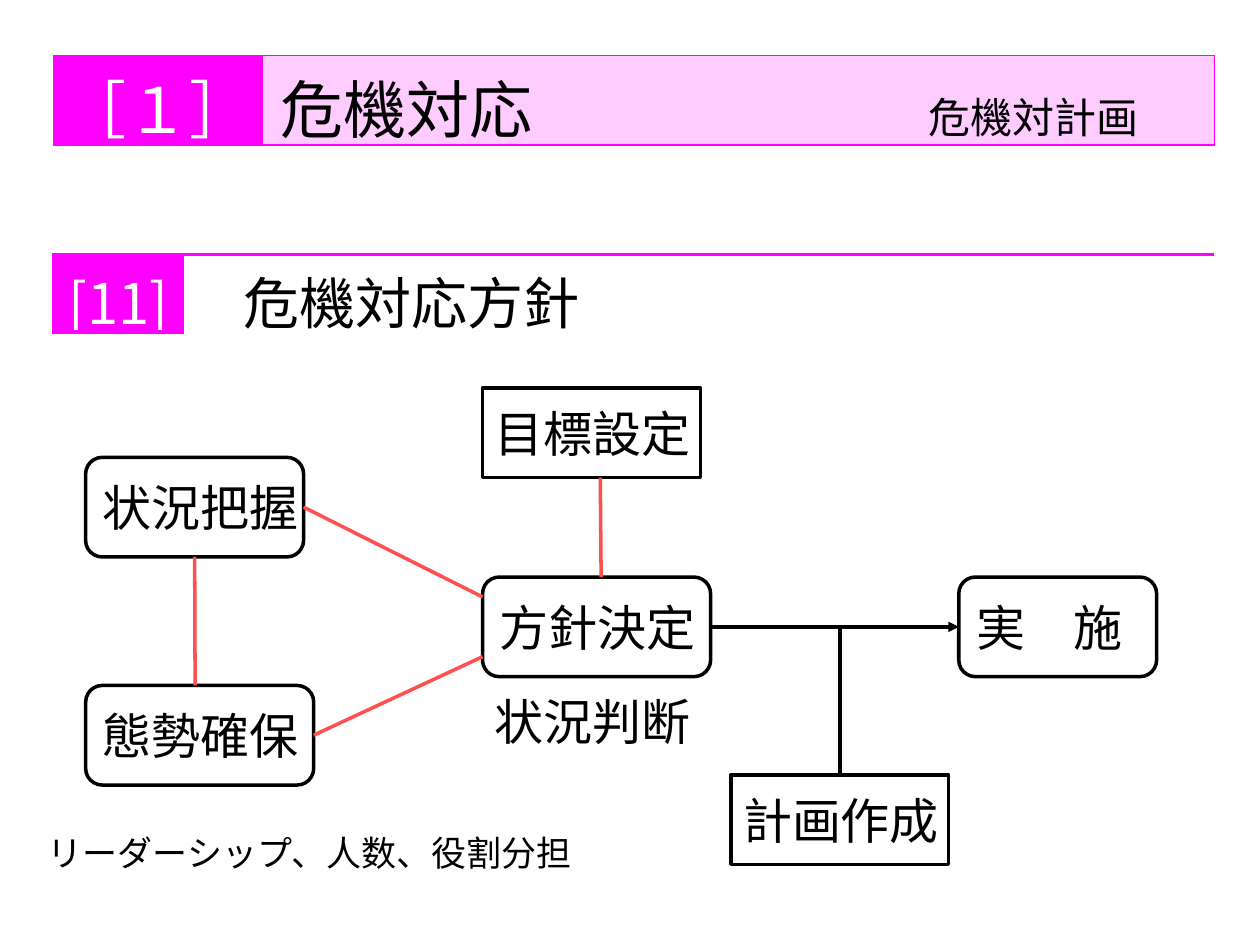
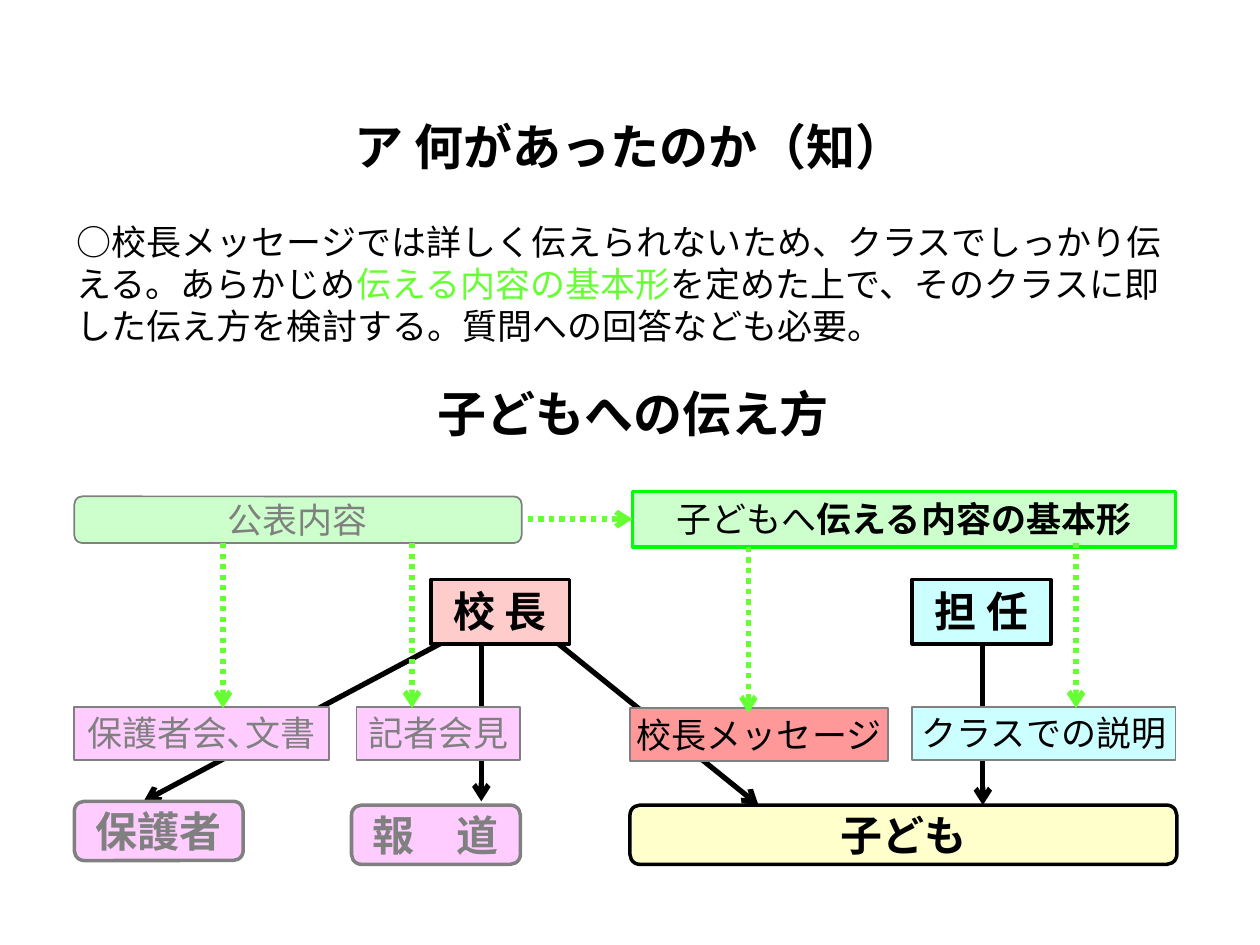
from lxml.etree import SubElement
from pptx import Presentation
from pptx.dml.color import RGBColor
from pptx.enum.dml import MSO_LINE
from pptx.enum.shapes import MSO_CONNECTOR, MSO_SHAPE
from pptx.enum.text import MSO_ANCHOR, PP_ALIGN
from pptx.oxml.ns import qn
from pptx.util import Inches, Pt

# Shared look; lengths are grid units, 100 columns by 75 rows per slide
COLUMNS, ROWS, UNIT = 100, 75, 0.1
LATIN, JAPANESE = "Arial", "Noto Sans CJK JP"
BLACK, WHITE, GRAY = "000000", "FFFFFF", "808080"
MAGENTA, PINK, RED = "FF00FF", "FFCCFF", "FF5050"
GREEN, PALE_GREEN, LIME = "66FF33", "CCFFCC", "00FF00"
PALE_BLUE, PALE_RED, SALMON, CREAM = "CCFFFF", "FFCCCC", "FF9999", "FFFFCC"
ROUND, SQUARE = MSO_SHAPE.ROUNDED_RECTANGLE, MSO_SHAPE.RECTANGLE
TIGHT = 0.4

# Slide 1: heading bands as (place, label width, border width, label, text, sizes)
SECTION_BAND = {
    "place": (4.3, 20.2, 92.1, 6.1), "label_width": 10.2, "border": 2.25,
    "label": "[11]", "size": 32, "indent": 4.8, "fill": WHITE,
    "spans": [("危機対応方針", {"size": 32})],
    "text_edges": {"R": (WHITE, 1), "B": (WHITE, 1)},
}
CHAPTER_BAND = {
    "place": (4.3, 4.4, 92.1, 7.1), "label_width": 16.5, "border": 1,
    "label": "［１］", "size": 36, "indent": 1.5, "fill": PINK, "tab": 51.4,
    "spans": [("危機対応", {"size": 36}), ("\t危機対計画", {"size": 24})],
    "text_edges": {},
}

# Slide 1: steps as name -> (outline, left, top, width, height)
STEPS = {
    "態勢確保": (ROUND, 6.8, 54.4, 18.1, 7.9),
    "状況把握": (ROUND, 6.8, 36.3, 17.3, 7.9),
    "方針決定": (ROUND, 38.3, 45.8, 18.1, 7.9),
    "実　施": (ROUND, 76.1, 45.8, 15.7, 7.9),
    "目標設定": (SQUARE, 38.3, 30.8, 17.3, 7.1),
    "計画作成": (SQUARE, 58, 61.5, 17.3, 7.1),
}
# Links join points given as shares of a step's width and height
STEP_LINKS = [
    ("状況把握", (0.5, 1), "態勢確保", (0.48, 0)),
    ("状況把握", (1, 0.5), "方針決定", (0, 0.2)),
    ("態勢確保", (1, 0.5), "方針決定", (0, 0.8)),
    ("目標設定", (0.54, 1), "方針決定", (0.52, 0)),
]
STEP_NOTES = [
    ("状況判断", (38.3, 54.4, 18.1, 5.7), 28),
    ("リーダーシップ、人数、役割分担", (2.8, 65.5, 45.7, 4.3), 20),
]

# Slide 2: text
HEADINGS = [
    ("ア 何があったのか（知）", (20.6, 8.4, 58.7, 6.3)),
    ("子どもへの伝え方", (20.9, 29.6, 58.7, 6.3)),
]
EXPLANATION = [
    ("○校長メッセージでは詳しく伝えられないため、クラスでしっかり伝える。あらかじめ", {}),
    ("伝える内容の基本形", {"color": GREEN}),
    ("を定めた上で、そのクラスに即した伝え方を検討する。質問への回答なども必要。", {}),
]
# Slide 2: groups share a format; members are (text, place, fill, colour)
SPEAKERS = [
    ("担 任", (72.4, 46, 11, 5.1), PALE_BLUE, BLACK),
    ("校 長", (34.2, 46, 11, 5.1), PALE_RED, BLACK),
]
AUDIENCES = [
    ("保護者", (5.9, 63.6, 13.4, 4.7), PINK, GRAY),
    ("報　道", (27.9, 63.9, 13.4, 4.7), PINK, GRAY),
    ("子ども", (50, 63.9, 43.4, 4.7), CREAM, BLACK),
]
CHANNELS = [
    ("クラスでの説明", (72.4, 56.1, 20.9, 4.2), PALE_BLUE, BLACK),
    ("校長メッセージ", (50, 56.2, 20.5, 4.2), SALMON, BLACK),
    ("保護者会､文書", (5.9, 56.1, 20.2, 4.2), PINK, GRAY),
    ("記者会見", (28.3, 56.1, 13, 4.2), PINK, GRAY),
]
PUBLIC_CONTENT = ("公表内容", (5.9, 39.4, 35.5, 3.7))
CHILD_CONTENT = [("子どもへ", {}), ("伝える内容の基本形", {"bold": True})]
CHILD_PLACE = (50.2, 39, 43.1, 4.4)
SPEECH_ARROWS = [
    ((78, 51.3), (78, 63.9)),
    ((44.2, 51), (60.2, 63.9)),
    ((35.1, 51), (11.4, 63.6)),
    ((38.2, 51), (38.2, 63.6)),
]
CONTENT_ARROWS = [
    ((17.7, 43.1), (17.7, 56.2)),
    ((32.7, 43.1), (32.7, 56.2)),
    ((41.9, 41.2), (50.2, 41.2)),
    ((59.4, 43.4), (59.4, 56.6)),
    ((85.4, 43.1), (85.4, 56.2)),
]


def rgb(code):
    return RGBColor.from_string(code)


def grid(*values):
    return [Inches(value * UNIT) for value in values]


def write(frame, spans, align=PP_ALIGN.LEFT, **base):
    """Fill the first paragraph with (text, format) spans."""
    para = frame.paragraphs[0]
    para.alignment = align
    for text, changes in spans:
        look = {"size": 20, "bold": False, "name": JAPANESE, "color": BLACK, **base, **changes}
        span = para.add_run()
        span.text = text
        span.font.color.rgb = rgb(look.pop("color"))
        look["size"] = Pt(look["size"])
        for key, value in look.items():
            setattr(span.font, key, value)
        SubElement(span.font._element, qn("a:ea")).set("typeface", JAPANESE)
    return para


def set_margins(holder, sides):
    for side, value in sides.items():
        setattr(holder, "margin_" + side, Inches(value * UNIT))


def all_sides(value):
    return dict.fromkeys(("left", "top", "right", "bottom"), value)


def add_text(page, place, spans, anchor=MSO_ANCHOR.TOP, **look):
    frame = page.shapes.add_textbox(*grid(*place)).text_frame
    frame.word_wrap = True
    frame.vertical_anchor = anchor
    write(frame, spans, **look)


def add_box(page, outline, place, spans, fill=WHITE, line=BLACK, weight=2,
            wrap=True, anchor=MSO_ANCHOR.MIDDLE, inset=None, **look):
    box = page.shapes.add_shape(outline, *grid(*place))
    box.shadow.inherit = False
    box.fill.solid()
    box.fill.fore_color.rgb = rgb(fill)
    box.line.color.rgb = rgb(line)
    box.line.width = Pt(weight)
    frame = box.text_frame
    frame.word_wrap = wrap
    frame.vertical_anchor = anchor
    if inset is not None:
        set_margins(frame, all_sides(inset))
    write(frame, spans, **look)


def add_line(page, start, end, color=BLACK, weight=2, dash=None, head=None):
    line = page.shapes.add_connector(MSO_CONNECTOR.STRAIGHT, *grid(*start, *end))
    line.line.color.rgb = rgb(color)
    line.line.width = Pt(weight)
    if dash:
        line.line.dash_style = dash
    properties = line._element.spPr
    if head:
        SubElement(properties.find(qn("a:ln")), qn("a:tailEnd")).set("type", head)
    SubElement(properties, qn("a:effectLst"))


def format_cell(cell, fill, edges, left=TIGHT):
    properties = cell._tc.get_or_add_tcPr()
    for side in "LRTB":
        color, weight = edges[side]
        edge = SubElement(properties, qn("a:ln" + side), w=str(Pt(weight)))
        SubElement(SubElement(edge, qn("a:solidFill")), qn("a:srgbClr")).set("val", color)
    cell.fill.solid()
    cell.fill.fore_color.rgb = rgb(fill)
    set_margins(cell, {**all_sides(TIGHT), "left": left})


def add_band(page, band):
    """One-row table: a numbered label and its heading."""
    table = page.shapes.add_table(1, 2, *grid(*band["place"])).table
    table.first_row = table.horz_banding = False
    label_width = band["label_width"]
    widths = grid(label_width, band["place"][2] - label_width)
    for column, width in zip(table.columns, widths):
        column.width = width
    label, heading = table.rows[0].cells
    edges = dict.fromkeys("LRTB", (MAGENTA, band["border"]))
    format_cell(label, MAGENTA, edges)
    format_cell(heading, band["fill"], {**edges, **band["text_edges"]}, band["indent"])
    write(label.text_frame, [(band["label"], {})], PP_ALIGN.CENTER,
          size=band["size"], color=WHITE)
    para = write(heading.text_frame, band["spans"])
    if "tab" in band:
        stops = SubElement(para._p.get_or_add_pPr(), qn("a:tabLst"))
        SubElement(stops, qn("a:tab"), pos=str(grid(band["tab"])[0]), algn="l")


def step_point(name, shares):
    _, left, top, width, height = STEPS[name]
    return left + width * shares[0], top + height * shares[1]


def build_policy_page(page):
    for name, (outline, *place) in STEPS.items():
        add_box(page, outline, place, [(name, {})], wrap=False, size=28, name=LATIN)
    for first, leaving, second, arriving in STEP_LINKS:
        add_line(page, step_point(first, leaving), step_point(second, arriving), RED)
    # Decision leads to action, with the plan joining on the way
    decision = step_point("方針決定", (1, 0.5))
    add_line(page, decision, step_point("実　施", (0, 0.5)), head="triangle")
    plan = step_point("計画作成", (0.5, 0))
    add_line(page, plan, (plan[0], decision[1]))
    for text, place, size in STEP_NOTES:
        add_text(page, place, [(text, {})], size=size, name=LATIN)
    for band in (SECTION_BAND, CHAPTER_BAND):
        add_band(page, band)


def build_message_page(page):
    for start, end in SPEECH_ARROWS:
        add_line(page, start, end, weight=3, head="arrow")
    add_text(page, (5.1, 17, 89.8, 11.1), EXPLANATION)
    for text, place in HEADINGS:
        add_text(page, place, [(text, {})], MSO_ANCHOR.MIDDLE,
                 align=PP_ALIGN.CENTER, size=28, bold=True)
    # Boxes, one format per group
    centered = {"align": PP_ALIGN.CENTER}
    strong = {**centered, "size": 24, "bold": True}
    for text, place, fill, color in SPEAKERS:
        add_box(page, SQUARE, place, [(text, {})], fill, anchor=MSO_ANCHOR.TOP, **strong)
    for text, place, fill, color in AUDIENCES:
        add_box(page, ROUND, place, [(text, {})], fill, color, color=color, **strong)
    text, place = PUBLIC_CONTENT
    add_box(page, ROUND, place, [(text, {})], PALE_GREEN, GRAY, 1, color=GRAY, **centered)
    add_box(page, SQUARE, CHILD_PLACE, CHILD_CONTENT, PALE_GREEN, LIME,
            anchor=MSO_ANCHOR.TOP, **centered)
    for text, place, fill, color in CHANNELS:
        add_box(page, SQUARE, place, [(text, {})], fill, GRAY, 1, color=color,
                anchor=MSO_ANCHOR.TOP, inset=TIGHT, **centered)
    for start, end in CONTENT_ARROWS:
        add_line(page, start, end, GREEN, 3, MSO_LINE.ROUND_DOT, "arrow")


def main():
    deck = Presentation()
    deck.slide_width, deck.slide_height = grid(COLUMNS, ROWS)
    for build in (build_policy_page, build_message_page):
        build(deck.slides.add_slide(deck.slide_layouts[6]))
    deck.save("out.pptx")


if __name__ == "__main__":
    main()
